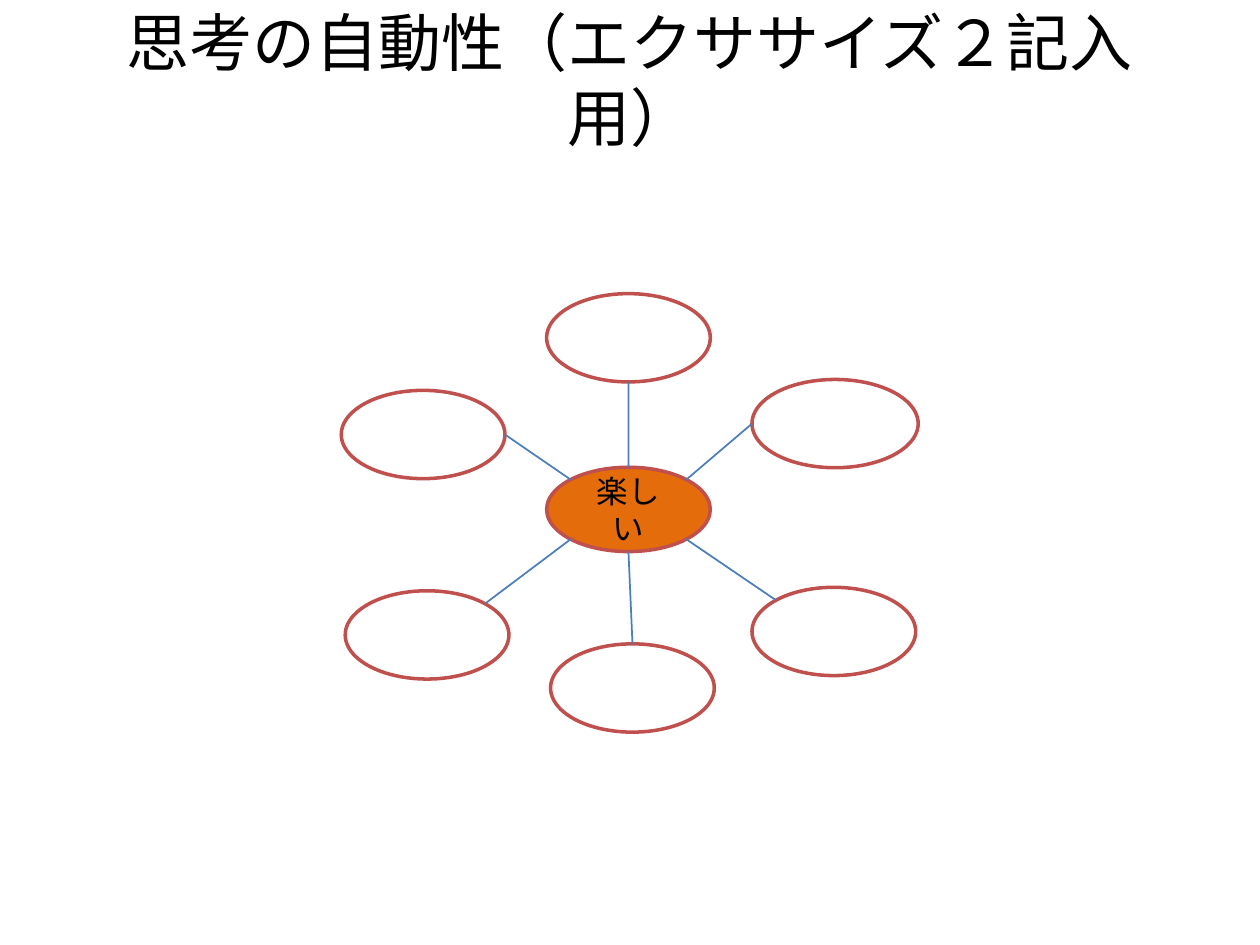
from dataclasses import dataclass
from math import cos, radians, sin

from lxml.etree import SubElement
from pptx import Presentation
from pptx.dml.color import RGBColor as Rgb
from pptx.enum.shapes import MSO_CONNECTOR as Link, MSO_SHAPE as Kind
from pptx.enum.text import MSO_ANCHOR as Anchor, MSO_AUTO_SIZE as Fit, PP_ALIGN as Align
from pptx.oxml.ns import qn
from pptx.util import Cm, Pt


@dataclass(frozen=True)
class Theme:
    font: str = "Calibri"
    ink: Rgb = Rgb(0, 0, 0)
    paper: Rgb = Rgb(255, 255, 255)
    accent: Rgb = Rgb(0xE4, 0x6C, 0x0A)
    edge: Rgb = Rgb(0xC0, 0x50, 0x4D)
    link: Rgb = Rgb(0x4B, 0x7E, 0xBC)
    title: Pt = Pt(36)
    label: Pt = Pt(18)
    rim: Pt = Pt(2)
    thin: Pt = Pt(1)


THEME = Theme()
HUB = (11.02, 9.42, 3.3, 1.7)
# left, top, width, height in cm; angle leaving the hub; angle meeting the leaf
LEAVES = [
    ((11.02, 5.92, 3.3, 1.78), 90, 270),
    ((6.88, 7.87, 3.3, 1.78), 135, 0),
    ((6.96, 11.91, 3.3, 1.78), 225, 45),
    ((11.1, 12.98, 3.3, 1.78), 270, 90),
    ((15.16, 11.84, 3.3, 1.78), 315, 135),
    ((15.16, 7.65, 3.35, 1.78), 45, 180),
]


def write(frame, text, size):
    frame.text = text
    frame.word_wrap = True
    frame.auto_size = Fit.NONE
    frame.vertical_anchor = Anchor.MIDDLE
    para = frame.paragraphs[0]
    para.alignment = Align.CENTER
    font = para.runs[0].font
    font.name, font.size = THEME.font, size
    font.color.rgb = THEME.ink


def add_title(slide, text):
    title = slide.shapes.title
    title.left, title.top = Cm(1.27), Cm(0)
    title.width, title.height = Cm(22.86), Cm(3.18)
    write(title.text_frame, text, THEME.title)


def add_oval(shapes, box, fill):
    oval = shapes.add_shape(Kind.OVAL, *map(Cm, box))
    oval.shadow.inherit = False
    oval.fill.solid()
    oval.fill.fore_color.rgb = fill
    oval.line.color.rgb = THEME.edge
    oval.line.width = THEME.rim
    return oval


def rim_point(box, angle):
    """Point on the oval's rim, angle counted anticlockwise from the right."""
    left, top, width, height = box
    turn = radians(angle)
    return Cm(left + width / 2 * (1 + cos(turn))), Cm(top + height / 2 * (1 - sin(turn)))


def add_link(shapes, start, end):
    link = shapes.add_connector(Link.STRAIGHT, *start, *end)
    link.line.color.rgb = THEME.link
    link.line.width = THEME.thin
    SubElement(link._element.spPr, qn("a:effectLst"))


def add_map(slide, word):
    shapes = slide.shapes.add_group_shape().shapes
    hub = add_oval(shapes, HUB, THEME.accent)
    write(hub.text_frame, word, THEME.label)
    for box, leave, meet in LEAVES:
        add_oval(shapes, box, THEME.paper)
        add_link(shapes, rim_point(HUB, leave), rim_point(box, meet))


def main():
    deck = Presentation()
    deck.slide_width, deck.slide_height = Cm(25.4), Cm(19.05)
    slide = deck.slides.add_slide(deck.slide_layouts[5])
    add_title(slide, "思考の自動性（エクササイズ２記入用）")
    add_map(slide, "楽しい")
    deck.save("out.pptx")


if __name__ == "__main__":
    main()
